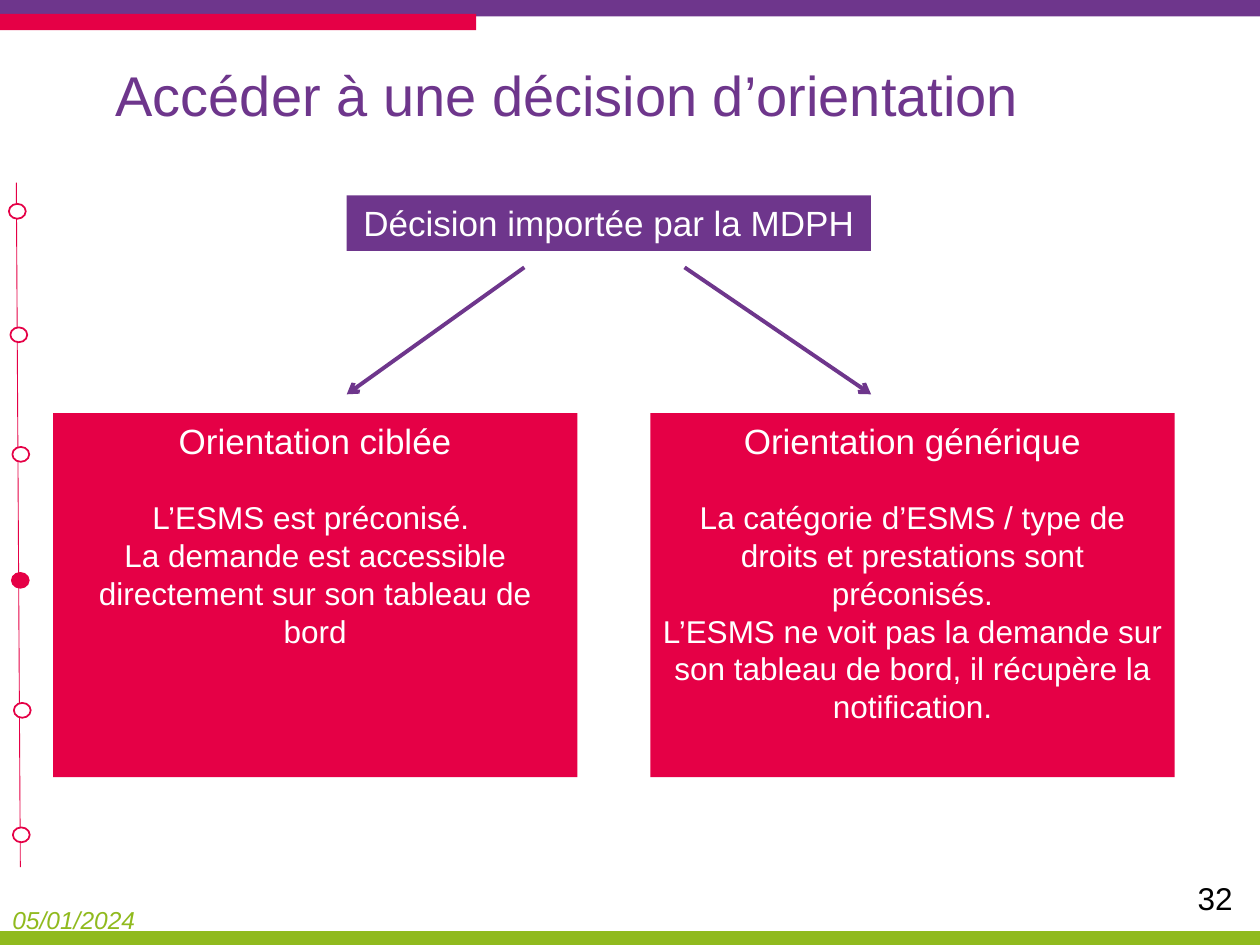
from dataclasses import dataclass

from lxml import etree
from pptx import Presentation
from pptx.dml.color import RGBColor
from pptx.enum.shapes import MSO_CONNECTOR, MSO_SHAPE
from pptx.enum.text import MSO_ANCHOR, PP_ALIGN
from pptx.oxml.ns import qn
from pptx.util import Cm, Pt

RECTANGLE, OVAL = MSO_SHAPE.RECTANGLE, MSO_SHAPE.OVAL
STRAIGHT = MSO_CONNECTOR.STRAIGHT
TOP, MIDDLE = MSO_ANCHOR.TOP, MSO_ANCHOR.MIDDLE
LEFT, CENTER, RIGHT = PP_ALIGN.LEFT, PP_ALIGN.CENTER, PP_ALIGN.RIGHT


@dataclass(frozen=True)
class Theme:
    """Colours, font and type sizes of the deck."""
    purple: RGBColor = RGBColor(0x6E, 0x36, 0x8C)
    red: RGBColor = RGBColor(0xE5, 0x00, 0x46)
    green: RGBColor = RGBColor(0x90, 0xBA, 0x1E)
    white: RGBColor = RGBColor(0xFF, 0xFF, 0xFF)
    black: RGBColor = RGBColor(0x00, 0x00, 0x00)
    font: str = "Arial"
    title: int = 32
    heading: int = 20
    body: int = 18
    date: int = 14


THEME = Theme()


@dataclass(frozen=True)
class Box:
    """A region of the page, in centimetres."""
    left: float
    top: float
    width: float
    height: float

    def lengths(self):
        """Return left, top, width and height as slide lengths."""
        return [Cm(value) for value in (self.left, self.top, self.width, self.height)]


def add_block(page, kind, box, fill, outline=None):
    """Add a flat filled shape, outlined only if a colour is given."""
    shape = page.shapes.add_shape(kind, *box.lengths())
    shape.shadow.inherit = False
    shape.fill.solid()
    shape.fill.fore_color.rgb = fill
    if outline is None:
        shape.line.fill.background()
    else:
        shape.line.color.rgb = outline
        shape.line.width = Pt(1)
    return shape


def add_line(page, start, end, color, width, arrow=False):
    """Add a straight line between two points, with an optional arrowhead."""
    line = page.shapes.add_connector(STRAIGHT, *[Cm(value) for value in (*start, *end)])
    line.line.color.rgb = color
    line.line.width = Pt(width)
    if arrow:
        etree.SubElement(line.line._get_or_add_ln(), qn("a:tailEnd"), type="arrow")
    etree.SubElement(line._element.spPr, qn("a:effectLst"))


def write(para, text, size, color, align):
    """Fill a paragraph and set its font."""
    para.text = text
    para.alignment = align
    para.font.name = THEME.font
    para.font.size = Pt(size)
    para.font.color.rgb = color


def add_label(page, box, text, size, color, align=LEFT, anchor=TOP):
    """Add a one-paragraph text box and return its paragraph."""
    frame = page.shapes.add_textbox(*box.lengths()).text_frame
    frame.word_wrap = True
    frame.vertical_anchor = anchor
    para = frame.paragraphs[0]
    write(para, text, size, color, align)
    return para


def add_card(page, box, fill, heading, details=()):
    """Add a coloured card with a heading and detail paragraphs below a gap."""
    frame = add_block(page, RECTANGLE, box, fill).text_frame
    frame.word_wrap = True
    frame.vertical_anchor = TOP
    write(frame.paragraphs[0], heading, THEME.heading, THEME.white, CENTER)
    for index, detail in enumerate(details):
        para = frame.add_paragraph()
        write(para, detail, THEME.body, THEME.white, CENTER)
        if index == 0:
            para.space_before = Pt(21)


def add_frame(page, box):
    """Add the colour bands, date and page number around the page."""
    band = 0.33
    bottom = box.top + box.height
    add_block(page, RECTANGLE, Box(box.left, box.top, box.width, band), THEME.purple)
    add_block(page, RECTANGLE, Box(box.left, box.top + 0.28, 9.6, band), THEME.red)
    add_block(page, RECTANGLE, Box(box.left, bottom - 0.28, box.width, 0.28), THEME.green)
    date = add_label(page, Box(box.left, bottom - 0.94, 3.78, 0.86), "05/01/2024",
                     THEME.date, THEME.green)
    date.font.italic = True
    add_label(page, Box(box.left + box.width - 6.02, bottom - 1.45, 5.72, 1.02), "32",
              THEME.body, THEME.black, RIGHT)


def add_title(page, box):
    """Add the slide title."""
    para = add_label(page, box, "Accéder à une décision d’orientation",
                     THEME.title, THEME.purple, anchor=MIDDLE)
    para.line_spacing = 0.9


def add_timeline(page, box, current):
    """Add the progress line with its stops, the current one filled."""
    add_line(page, (box.left + 0.15, box.top),
             (box.left + 0.23, box.top + box.height), THEME.red, 0.5)
    stops = [(0, 0.43), (0.03, 2.92), (0.07, 5.33), (0.06, 7.87), (0.1, 10.49), (0.08, 13)]
    for index, (across, down) in enumerate(stops):
        fill = THEME.red if index == current else THEME.white
        add_block(page, OVAL, Box(box.left + across, box.top + down, 0.34, 0.3),
                  fill, THEME.red)


def add_decision_tree(page, box):
    """Add the decision, its two arrows and the two kinds of orientation."""
    card_width, card_height, card_top = 10.57, 7.34, 4.39
    root_left = box.left + 5.92
    root_right = root_left + card_width
    add_card(page, Box(root_left, box.top, card_width, 1.12), THEME.purple,
             "Décision importée par la MDPH")
    arrow_top, arrow_bottom = box.top + 1.45, box.top + 4.01
    for start, end in ((root_left + 3.58, root_left), (root_right - 3.76, root_right)):
        add_line(page, (start, arrow_top), (end, arrow_bottom), THEME.purple, 2.25, True)
    cards = [
        ("Orientation ciblée",
         ("L’ESMS est préconisé. ",
          "La demande est accessible directement sur son tableau de bord")),
        ("Orientation générique",
         ("La catégorie d’ESMS / type de droits et prestations sont préconisés.",
          "L’ESMS ne voit pas la demande sur son tableau de bord, il récupère la notification.")),
    ]
    step = box.width - card_width
    for index, (heading, details) in enumerate(cards):
        card = Box(box.left + index * step, box.top + card_top, card_width, card_height)
        add_card(page, card, THEME.red, heading, details)


def main():
    """Build and save the slide."""
    deck = Presentation()
    deck.slide_width, deck.slide_height = Cm(25.4), Cm(19.05)
    page = deck.slides.add_slide(deck.slide_layouts[6])
    add_frame(page, Box(0, 0, 25.4, 19.05))
    add_title(page, Box(2.08, 0.86, 20.85, 2.24))
    add_decision_tree(page, Box(1.07, 3.94, 22.61, 11.73))
    add_timeline(page, Box(0.18, 3.68, 0.44, 13.8), current=3)
    deck.save("out.pptx")


if __name__ == "__main__":
    main()
